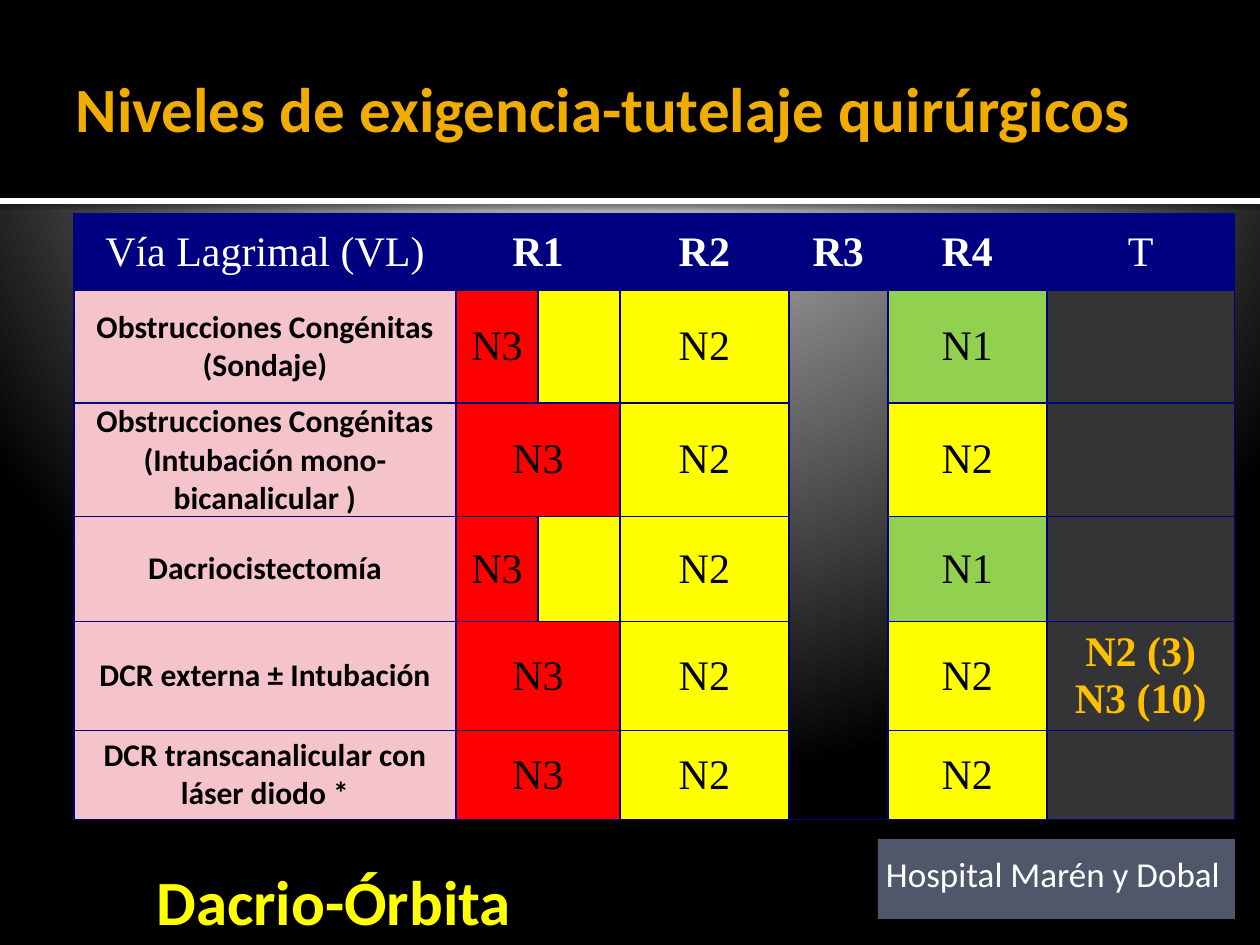
from dataclasses import dataclass

import pptx
import pptx.dml.color
import pptx.enum.shapes
import pptx.enum.text
import pptx.oxml
import pptx.oxml.ns
import pptx.util

PX = 914400 // 126
ALIGN = pptx.enum.text.PP_ALIGN
ANCHOR = pptx.enum.text.MSO_ANCHOR
NAMESPACE = pptx.oxml.ns.nsdecls("a")


@dataclass(frozen=True)
class Theme:
    sans: str = "Calibri"
    serif: str = "Times New Roman"
    heading: int = 36
    level: int = 24
    label: int = 20
    procedure: int = 18
    title: str = "F0AD00"
    black: str = "000000"
    white: str = "FFFFFF"
    navy: str = "000080"
    pink: str = "F5C4CB"
    red: str = "FF0000"
    yellow: str = "FFFF00"
    green: str = "92D050"
    charcoal: str = "343437"
    slate: str = "4F576A"
    amber: str = "FFC000"


THEME = Theme()
LEVEL_FILLS = {"N1": THEME.green, "N2": THEME.yellow, "N3": THEME.red}


@dataclass(frozen=True)
class Procedure:
    name: str
    r4: str
    split_r1: bool = False  # R1 is half N3, half blank yellow
    tutor: str = ""


HEADERS = ("Vía Lagrimal (VL)", "R1", "", "R2", "R3", "R4", "T")
PROCEDURES = (
    Procedure("Obstrucciones Congénitas (Sondaje)", "N1", split_r1=True),
    Procedure("Obstrucciones Congénitas (Intubación mono-bicanalicular )", "N2"),
    Procedure("Dacriocistectomía", "N1", split_r1=True),
    Procedure("DCR externa ± Intubación", "N2", tutor="N2 (3)\nN3 (10)"),
    Procedure("DCR transcanalicular con láser diodo *", "N2"),
)
COLUMNS = (382, 82, 82, 169, 99, 159, 188)
ROWS = (76, 113, 113, 105, 109, 89)


def px(length: int) -> int:
    return pptx.util.Emu(length * PX)


def rgb(color: str) -> pptx.dml.color.RGBColor:
    return pptx.dml.color.RGBColor.from_string(color)


def write(frame, text: str, *, size: int, color: str, font: str = THEME.sans,
          bold: bool = False, align=ALIGN.LEFT) -> None:
    """Fill a text frame, one paragraph per line of text."""
    frame.word_wrap = True
    for index, line in enumerate(text.split("\n")):
        para = frame.add_paragraph() if index else frame.paragraphs[0]
        para.alignment = align
        span = para.add_run()
        span.text = line
        span.font.name = font
        span.font.size = pptx.util.Pt(size)
        span.font.bold = bold
        span.font.color.rgb = rgb(color)


def add_box(page, left: int, top: int, width: int, height: int, fill: str):
    box = page.shapes.add_shape(pptx.enum.shapes.MSO_SHAPE.RECTANGLE,
                                px(left), px(top), px(width), px(height))
    box.shadow.inherit = False
    box.fill.solid()
    box.fill.fore_color.rgb = rgb(fill)
    box.line.fill.background()
    return box


def paint_background(page) -> None:
    """Round grey glow centred above the slide."""
    page.background.fill.gradient()
    old = page.element.find(".//" + pptx.oxml.ns.qn("a:gradFill"))
    stops = ((0, "C0C0C0"), (12, "C0C0C0"), (20, "BEBEBE"), (100, THEME.black))
    stop_xml = "".join(f'<a:gs pos="{at * 1000}"><a:srgbClr val="{color}"/></a:gs>'
                       for at, color in stops)
    new = pptx.oxml.parse_xml(
        f'<a:gradFill {NAMESPACE} rotWithShape="1"><a:gsLst>{stop_xml}</a:gsLst>'
        '<a:path path="circle"><a:fillToRect l="10000" t="-25000" r="10000" '
        'b="125000"/></a:path></a:gradFill>')
    old.getparent().replace(old, new)


def add_header_shadow(box) -> None:
    effects = box.element.spPr.find(pptx.oxml.ns.qn("a:effectLst"))
    effects.append(pptx.oxml.parse_xml(
        f'<a:outerShdw {NAMESPACE} blurRad="31750" dist="10160" dir="5400000">'
        f'<a:srgbClr val="{THEME.black}"><a:alpha val="60000"/></a:srgbClr>'
        '</a:outerShdw>'))


def add_borders(cell) -> None:
    properties = cell._tc.get_or_add_tcPr()
    for index, side in enumerate(("lnL", "lnR", "lnT", "lnB")):
        properties.insert(index, pptx.oxml.parse_xml(
            f'<a:{side} {NAMESPACE} w="12700"><a:solidFill>'
            f'<a:srgbClr val="{THEME.navy}"/></a:solidFill></a:{side}>'))


def fill_cell(cell, text: str, fill: str, *, size: int = THEME.level,
              color: str = THEME.black, font: str = THEME.serif,
              bold: bool = False) -> None:
    cell.fill.solid()
    cell.fill.fore_color.rgb = rgb(fill)
    if text:
        write(cell.text_frame, text, size=size, color=color, font=font,
              bold=bold, align=ALIGN.CENTER)


def add_levels_table(page, left: int, top: int) -> None:
    frame = page.shapes.add_table(len(ROWS), len(COLUMNS), px(left), px(top),
                                  px(sum(COLUMNS)), px(sum(ROWS)))
    table = frame.table
    table.horz_banding = False
    for column, width in zip(table.columns, COLUMNS):
        column.width = px(width)
    for row, height in zip(table.rows, ROWS):
        row.height = px(height)

    for cell in table.iter_cells():
        cell.vertical_anchor = ANCHOR.MIDDLE
        cell.margin_left = cell.margin_right = px(9)
        cell.margin_top = cell.margin_bottom = 0
        cell.fill.background()
        add_borders(cell)

    # Header row
    for column, text in enumerate(HEADERS):
        fill_cell(table.cell(0, column), text, THEME.navy, color=THEME.white,
                  bold=text.startswith("R"))
    table.cell(0, 1).merge(table.cell(0, 2))

    # One row per procedure; the R3 column stays open
    for row, item in enumerate(PROCEDURES, start=1):
        fill_cell(table.cell(row, 0), item.name, THEME.pink,
                  size=THEME.procedure, font=THEME.sans, bold=True)
        for column, level in ((1, "N3"), (3, "N2"), (5, item.r4)):
            fill_cell(table.cell(row, column), level, LEVEL_FILLS[level])
        if item.split_r1:
            fill_cell(table.cell(row, 2), "", THEME.yellow)
        else:
            table.cell(row, 1).merge(table.cell(row, 2))
        fill_cell(table.cell(row, 6), item.tutor, THEME.charcoal,
                  color=THEME.amber, bold=True)
    table.cell(1, 4).merge(table.cell(len(PROCEDURES), 4))


def main() -> None:
    deck = pptx.Presentation()
    deck.slide_width, deck.slide_height = px(1260), px(945)
    page = deck.slides.add_slide(deck.slide_layouts[5])
    paint_background(page)

    # Header band and its white rule
    add_header_shadow(add_box(page, 0, 198, 1260, 6, THEME.white))
    add_box(page, 0, 0, 1260, 198, THEME.black)

    # Title, brought in front of the band
    title = page.shapes.title
    title.left, title.top, title.width, title.height = map(px, (63, 21, 1134, 173))
    title.text_frame.auto_size = pptx.enum.text.MSO_AUTO_SIZE.NONE
    title.text_frame.vertical_anchor = ANCHOR.MIDDLE
    write(title.text_frame, "Niveles de exigencia-tutelaje quirúrgicos",
          size=THEME.heading, color=THEME.title, bold=True)
    page.shapes.element.append(title.element)

    # Section name and hospital label
    section = page.shapes.add_textbox(px(144), px(856), px(525), px(89))
    write(section.text_frame, "Dacrio-Órbita", size=THEME.heading,
          color=THEME.yellow, bold=True)
    hospital = add_box(page, 878, 839, 357, 80, THEME.slate)
    hospital.text_frame.vertical_anchor = ANCHOR.TOP
    hospital.text_frame.margin_left = px(8)
    hospital.text_frame.margin_top = px(13)
    write(hospital.text_frame, "Hospital Marén y Dobal", size=THEME.label,
          color=THEME.white)

    add_levels_table(page, 74, 214)
    deck.save("out.pptx")


if __name__ == "__main__":
    main()
